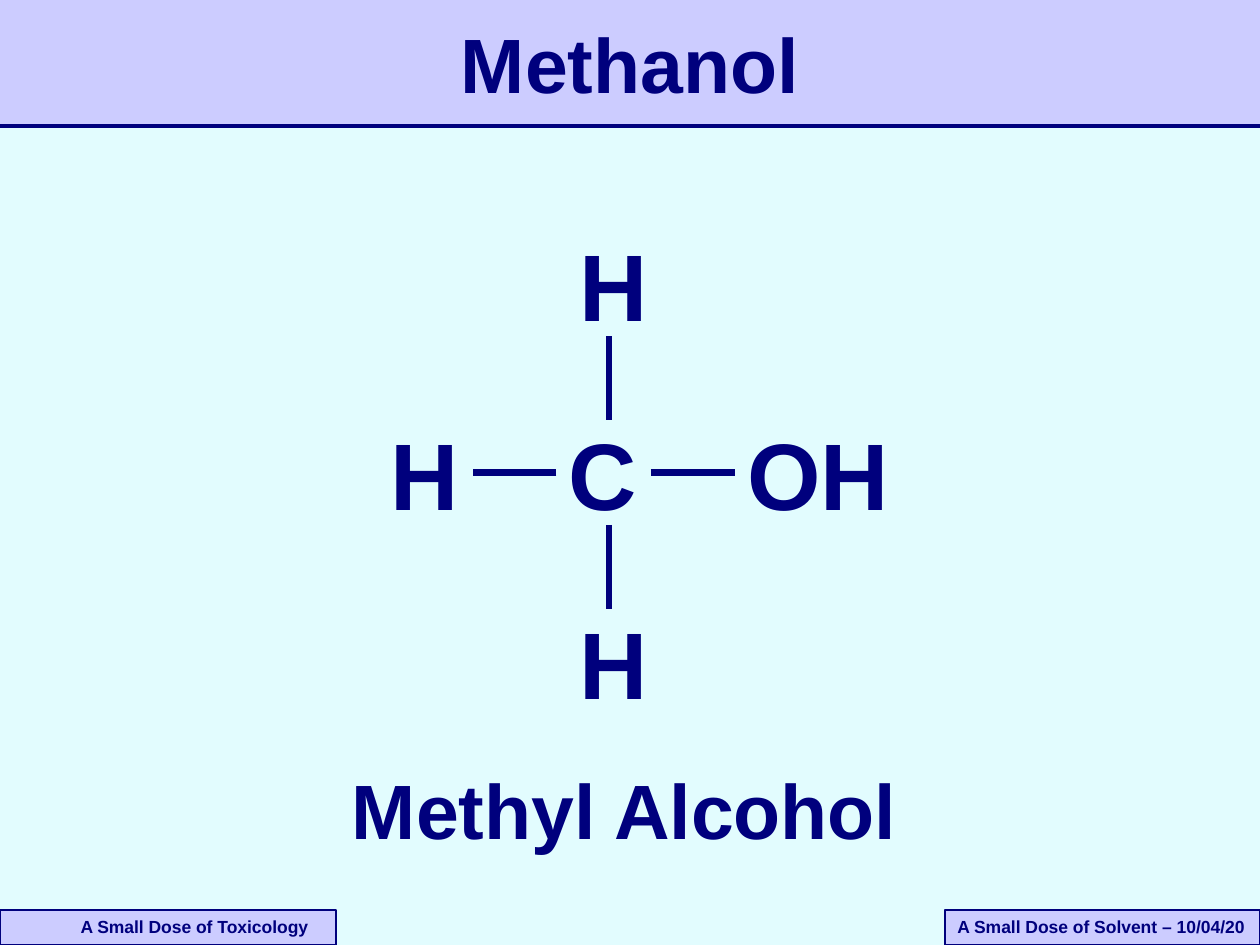
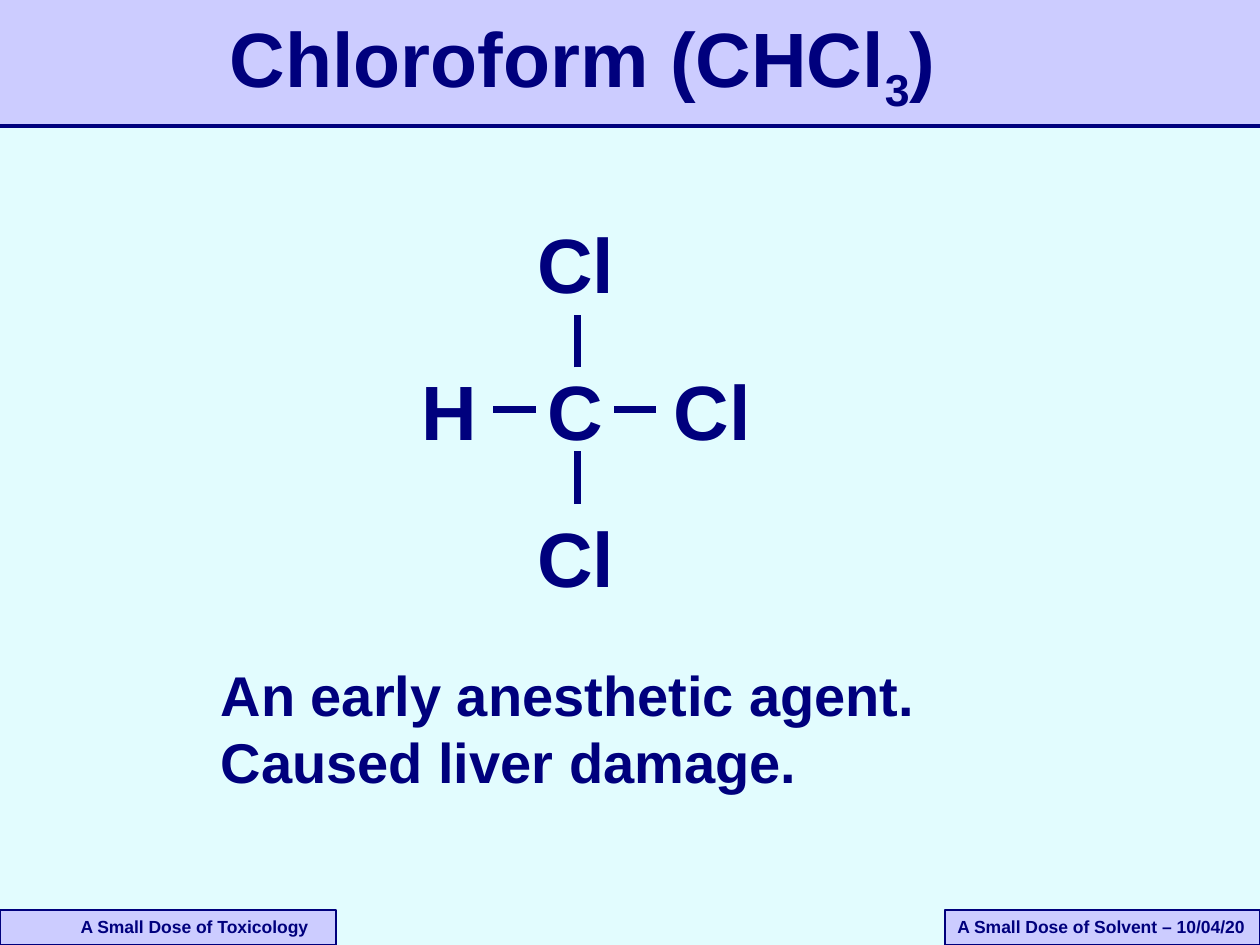
"""Two solvent slides with structural formulas of methanol and chloroform."""
from itertools import product

from lxml.etree import SubElement
from pptx import Presentation
from pptx.dml.color import RGBColor
from pptx.enum.shapes import MSO_CONNECTOR as Connector, MSO_SHAPE as Preset
from pptx.enum.text import MSO_ANCHOR as Anchor, PP_ALIGN as Align
from pptx.oxml.ns import qn
from pptx.util import Pt

NAVY, LAVENDER, PALE_CYAN = "00007D", "CCCCFF", "E2FCFE"
WIDTH, HEIGHT, BAND_HEIGHT = 720, 540, 72
FONT = {"name": "Arial", "bold": True}


def paint(color_owner, hex_color):
    """Give a fill a solid colour."""
    color_owner.solid()
    color_owner.fore_color.rgb = RGBColor.from_string(hex_color)


def write(frame, paragraphs, size, align=Align.LEFT, **frame_format):
    """Fill a text frame; each paragraph is a list of (text, baseline) runs."""
    for key, value in {"word_wrap": True, "vertical_anchor": Anchor.TOP, **frame_format}.items():
        setattr(frame, key, value)
    for number, runs in enumerate(paragraphs):
        paragraph = frame.add_paragraph() if number else frame.paragraphs[0]
        paragraph.alignment = align
        for text, baseline in runs:
            run = paragraph.add_run()
            run.text = text
            for key, value in {**FONT, "size": Pt(size)}.items():
                setattr(run.font, key, value)
            paint(run.font.fill, NAVY)
            if baseline:
                run._r.get_or_add_rPr().set("baseline", str(baseline * 1000))


def add_text(shapes, box, paragraphs, size, **options):
    """Add a text box at (left, top, width, height)."""
    label = shapes.add_textbox(*map(Pt, box))
    write(label.text_frame, paragraphs, size, **options)
    return label


def add_panel(slide, box, outlined=False):
    """Add a lavender rectangle, with a thin navy outline if wanted."""
    panel = slide.shapes.add_shape(Preset.RECTANGLE, *map(Pt, box))
    panel.shadow.inherit = False
    paint(panel.fill, LAVENDER)
    if outlined:
        paint(panel.line.fill, NAVY)
        panel.line.width = Pt(0.75)
    else:
        panel.line.fill.background()
    return panel


def add_line(shapes, start, end, weight):
    """Add a straight navy line without a shadow."""
    line = shapes.add_connector(Connector.STRAIGHT, *map(Pt, (*start, *end)))
    paint(line.line.fill, NAVY)
    line.line.width = Pt(weight)
    SubElement(line._element.spPr, qn("a:effectLst"))
    return line


def add_footer(slide, left, width, text, indent):
    """Add an outlined footer box at the bottom edge."""
    footer = add_panel(slide, (left, HEIGHT - 20, width, 20), outlined=True)
    write(footer.text_frame, [[(text, 0)]], 10, margin_left=Pt(indent), margin_right=0)


def add_solvent_slide(deck, title, title_left, title_width):
    """Add a slide with background, title band and footers."""
    slide = deck.slides.add_slide(deck.slide_layouts[6])
    paint(slide.background.fill, PALE_CYAN)
    add_panel(slide, (0, 0, WIDTH, BAND_HEIGHT))
    add_line(slide.shapes, (0, BAND_HEIGHT), (WIDTH, BAND_HEIGHT), 2)
    add_footer(slide, 540, 180, "A Small Dose of Solvent – 10/04/20", 7.2)
    add_footer(slide, 0, 192, "A Small Dose of Toxicology", 46)
    add_text(slide.shapes, (title_left, 6, title_width, 60), [title], 44,
             align=Align.CENTER, vertical_anchor=Anchor.MIDDLE)
    return slide


def side_middles(atom):
    """Map the middle of each side of an atom's box to its connection site."""
    middle_x, middle_y = atom.left + atom.width // 2, atom.top + atom.height // 2
    points = ((middle_x, atom.top), (atom.left, middle_y),
              (middle_x, atom.top + atom.height), (atom.left + atom.width, middle_y))
    return {point: (atom, site) for site, point in enumerate(points)}


def add_molecule(slide, atoms, size, top, row_step, row_height, x_bonds, y_bonds):
    """Group atoms (symbol, left, row, width) with four bonds around the centre."""
    molecule = slide.shapes.add_group_shape().shapes
    sites = {}
    for symbol, left, row, width in atoms:
        box = (left, top + row * row_step, width, row_height)
        sites.update(side_middles(add_text(molecule, box, [[(symbol, 0)]], size)))

    axis_y = top + row_step + row_height / 2
    (center_x, *x_reach), (axis_x, *y_reach) = x_bonds, y_bonds
    for side, horizontal in product((-1, 1), (True, False)):
        if horizontal:
            ends = [(center_x + side * reach, axis_y) for reach in x_reach]
        else:
            ends = [(axis_x, axis_y + side * reach) for reach in y_reach]
        bond = add_line(molecule, *ends, 3.5)
        for connect, end in zip((bond.begin_connect, bond.end_connect), ends):
            site = sites.get(tuple(map(Pt, end)))
            if site:
                connect(*site)


def main():
    """Build and save both slides."""
    deck = Presentation()
    deck.slide_width, deck.slide_height = Pt(WIDTH), Pt(HEIGHT)

    methanol = add_solvent_slide(deck, [("Methanol", 0)], 120, 480)
    add_molecule(methanol, [("C", 318, 1, 58), ("H", 216, 1, 54), ("H", 324, 2, 54),
                            ("H", 324, 0, 54), ("OH", 420, 1, 96)],
                 size=54, top=126, row_step=108, row_height=72,
                 x_bonds=(345, 27, 75), y_bonds=(348, 30, 78))
    add_text(methanol.shapes, (194, 432, 328, 60), [[("Methyl Alcohol", 0)]], 44,
             word_wrap=False)

    chloroform = add_solvent_slide(
        deck, [("Chloroform (CHCl", 0), ("3", -25), (")", 0)], 78, 510)
    add_molecule(chloroform, [("C", 306, 1, 58), ("H", 234, 1, 54), ("Cl", 300, 0, 60),
                              ("Cl", 378, 1, 60), ("Cl", 300, 2, 60)],
                 size=44, top=120, row_step=84, row_height=60,
                 x_bonds=(328.5, 22.5, 46.5), y_bonds=(330, 24, 54))
    add_text(chloroform.shapes, (119, 374, 433, 84),
             [[("An early anesthetic agent.", 0)], [("Caused liver damage.", 0)]], 32)

    deck.save("out.pptx")


if __name__ == "__main__":
    main()
